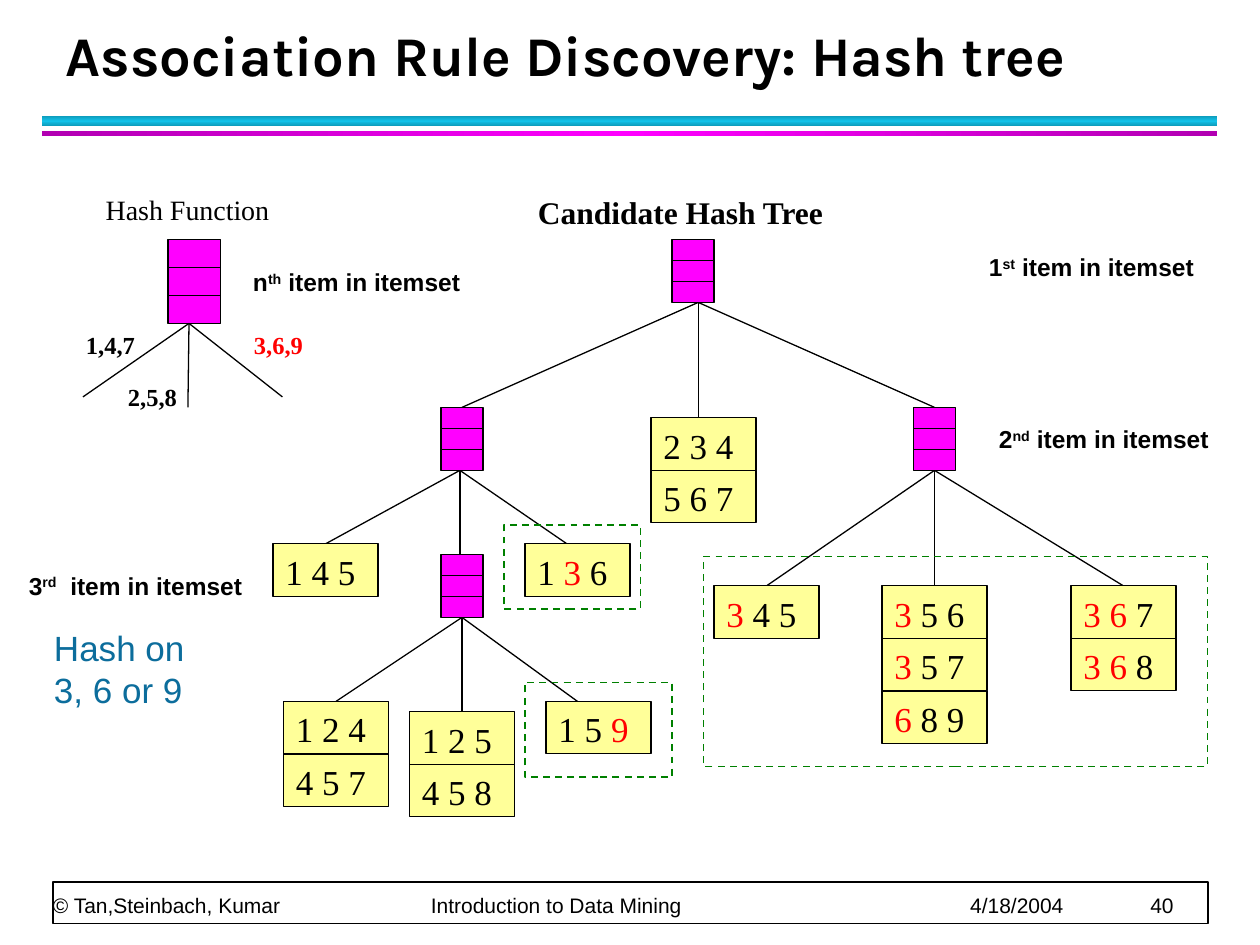
from copy import deepcopy

from lxml.etree import SubElement
from pptx import Presentation
from pptx.dml.color import RGBColor
from pptx.enum.dml import MSO_LINE
from pptx.enum.shapes import MSO_CONNECTOR, MSO_SHAPE
from pptx.enum.text import MSO_ANCHOR, PP_ALIGN
from pptx.oxml.ns import qn
from pptx.util import Inches, Pt

SERIF, SANS, HEAD = "Times New Roman", "Arial", "Karla"
BLACK, WHITE, RED, GREEN, BLUE = "000000", "FFFFFF", "FF0000", "008000", "0C6D9C"
MAGENTA, YELLOW = "FF00FF", "FFFF99"
TOP = 1.9  # row 0 of the diagram; rows and columns are twelfths of an inch


def color(hex_text):
    return RGBColor.from_string(hex_text)


def grid(col, row):
    return col / 12, TOP + row / 12


def rect(s, x, y, w, h, fill=None, line=BLACK, width=0.75, dash=None):
    sp = s.shapes.add_shape(MSO_SHAPE.RECTANGLE, *map(Inches, (x, y, w, h)))
    sp.shadow.inherit = False
    if fill:
        sp.fill.solid()
        sp.fill.fore_color.rgb = color(fill)
    else:
        sp.fill.background()
    if line:
        sp.line.color.rgb = color(line)
        sp.line.width = Pt(width)
        sp.line.dash_style = dash
    else:
        sp.line.fill.background()
    return sp


def line(s, start, end):
    """Thin black line between two grid points."""
    ends = map(Inches, (*grid(*start), *grid(*end)))
    c = s.shapes.add_connector(MSO_CONNECTOR.STRAIGHT, *ends)
    c.line.color.rgb = color(BLACK)
    c.line.width = Pt(0.75)
    SubElement(c._element.spPr, qn("a:effectLst"))


def write(tf, text, size, font=SERIF, fill=BLACK, bold=False, mark="",
          mark_fill=None, raised=False, wrap=True, anchor=MSO_ANCHOR.TOP,
          spacing=None, insets=(0.1, 0.05)):
    """Fill a text frame; `mark` is the part that is recoloured or raised."""
    tf.word_wrap, tf.vertical_anchor = wrap, anchor
    tf.margin_left = tf.margin_right = Inches(insets[0])
    tf.margin_top = tf.margin_bottom = Inches(insets[1])
    p = tf.paragraphs[0]
    p.alignment = PP_ALIGN.LEFT
    if spacing:
        p.line_spacing = Pt(spacing)
    for part in text.partition(mark) if mark else [text]:
        if not part:
            continue
        r = p.add_run()
        r.text = part
        f = r.font
        f.name, f.size, f.bold = font, Pt(size), bold
        marked = part == mark
        f.color.rgb = color(mark_fill if marked and mark_fill else fill)
        if marked and raised:
            r._r.get_or_add_rPr().set("baseline", "30000")
    return p


def label(s, text, x, y, w, h, size, **fmt):
    tf = s.shapes.add_textbox(*map(Inches, (x, y, w, h))).text_frame
    return write(tf, text, size, **fmt)


def gradient_bar(s, y, h, edge, middle, angle):
    fill = rect(s, 0.33, y, 9.33, h, line=None).fill
    fill.gradient()
    fill.gradient_angle = angle
    stop_list = s.shapes[-1]._element.spPr.find(".//" + qn("a:gsLst"))
    stop_list.insert(1, deepcopy(stop_list[0]))
    stops = zip(fill.gradient_stops, (0, 0.5, 1), (edge, middle, edge))
    for stop, position, hue in stops:
        stop.position = position
        stop.color.rgb = color(hue)


def header(s):
    gradient_bar(s, 0.92, 0.08, "0E9BBA", "12C2E9", 90)
    gradient_bar(s, 1.04, 0.04, "B200B2", "FF00FF", 0)
    title = s.shapes.title
    title.left, title.top, title.width, title.height = map(
        Inches, (0.42, 0.17, 9.06, 0.58))
    write(title.text_frame, "Association Rule Discovery: Hash tree", 32,
          font=HEAD, bold=True, anchor=MSO_ANCHOR.BOTTOM, spacing=36)


def footer(s, x=0.42, y=7, w=9.17, h=0.33):
    rect(s, x, y, w, h, WHITE, width=1)
    p = label(s, "© Tan,Steinbach, Kumar\tIntroduction to Data Mining\t4/18/2004\t40",
              x, y, w, 0.28, 12, font=SANS, anchor=MSO_ANCHOR.BOTTOM,
              spacing=20, insets=(0, 0))
    tabs = SubElement(p._p.get_or_add_pPr(), qn("a:tabLst"))
    for stop in (3, 7.28, 8.71):
        SubElement(tabs, qn("a:tab"), pos=str(Inches(stop)), algn="l")


def hash_node(s, col, row, cols=4, rows=6):
    """Box of three equal buckets."""
    rect(s, *grid(col, row), cols / 12, rows / 12, MAGENTA)
    for i in (1, 2):
        y = row + rows * i / 3
        line(s, (col, y), (col + cols, y))


def leaf(s, col, row, itemsets):
    """Stack of candidate itemsets, each with its red items."""
    for i, (items, red) in enumerate(itemsets):
        sp = rect(s, *grid(col, row + 5 * i), 10 / 12, 5 / 12, YELLOW)
        write(sp.text_frame, items, 20, mark=red, mark_fill=RED)


def fan(s, start, ends):
    for end in ends:
        line(s, start, end)


def hash_function(s):
    label(s, "Hash Function", 0.74, 1.48, 1.51, 0.37, 16, wrap=False)
    hash_node(s, 16, 0, 5, 8)
    fan(s, (18, 8), [(7.9, 15), (17.9, 16), (26.9, 15)])
    for text, col, row, hue in (("1,4,7", 7, 8, BLACK), ("2,5,8", 11, 13, BLACK),
                                ("3,6,9", 23, 8, RED)):
        label(s, text, *grid(col, row), 0.59, 0.33, 14, fill=hue, bold=True,
              wrap=False)


def candidate_tree(s):
    label(s, "Candidate Hash Tree", 4.17, 1.48, 2.49, 0.4, 18, bold=True,
          wrap=False)
    fan(s, (66.5, 6), [(44, 16), (66.5, 17), (89, 16)])
    fan(s, (43.8, 22), [(31, 29), (43.8, 30), (54, 29)])
    fan(s, (89, 22), [(73, 33), (89, 33), (107, 33)])
    fan(s, (44, 36), [(32, 44), (44, 45), (55, 44)])
    for col, row in ((64, 0), (42, 16), (87, 16), (42, 30)):
        hash_node(s, col, row)
    for col, row, itemsets in (
            (62, 17, [("2 3 4", ""), ("5 6 7", "")]),
            (26, 29, [("1 4 5", "")]),
            (50, 29, [("1 3 6", "3")]),
            (27, 44, [("1 2 4", ""), ("4 5 7", "")]),
            (39, 45, [("1 2 5", ""), ("4 5 8", "")]),
            (52, 44, [("1 5 9", "9")]),
            (68, 33, [("3 4 5", "3")]),
            (84, 33, [("3 5 6", "3"), ("3 5 7", "3"), ("6 8 9", "6")]),
            (102, 33, [("3 6 7", "3 6"), ("3 6 8", "3 6")])):
        leaf(s, col, row, itemsets)
    for col, row, cols, rows in ((50, 42.2, 14, 9), (67, 30.2, 48, 20),
                                 (48, 27.2, 13, 8)):
        rect(s, *grid(col, row), cols / 12, rows / 12, line=GREEN, width=1,
             dash=MSO_LINE.DASH)


def level_notes(s):
    for text, ordinal, x, y, w in (
            ("nth item in itemset", "th", 1.91, 2.07, 1.93),
            ("1st item in itemset", "st", 7.75, 1.95, 1.91),
            ("2nd item in itemset", "nd", 7.83, 3.32, 1.9),
            ("3rd  item in itemset", "rd", 0.13, 4.48, 1.99)):
        label(s, text, x, y, w, 0.34, 14, font=SANS, bold=True, mark=ordinal,
              raised=True, wrap=False)
    label(s, "Hash on 3, 6 or 9", 0.33, 4.92, 1.25, 0.77, 20, font=SANS,
          fill=BLUE)


def main():
    prs = Presentation()
    prs.slide_width, prs.slide_height = Inches(10), Inches(7.5)
    s = prs.slides.add_slide(prs.slide_layouts[5])
    for region in (header, footer, candidate_tree, hash_function, level_notes):
        region(s)
    prs.save("out.pptx")


if __name__ == "__main__":
    main()
